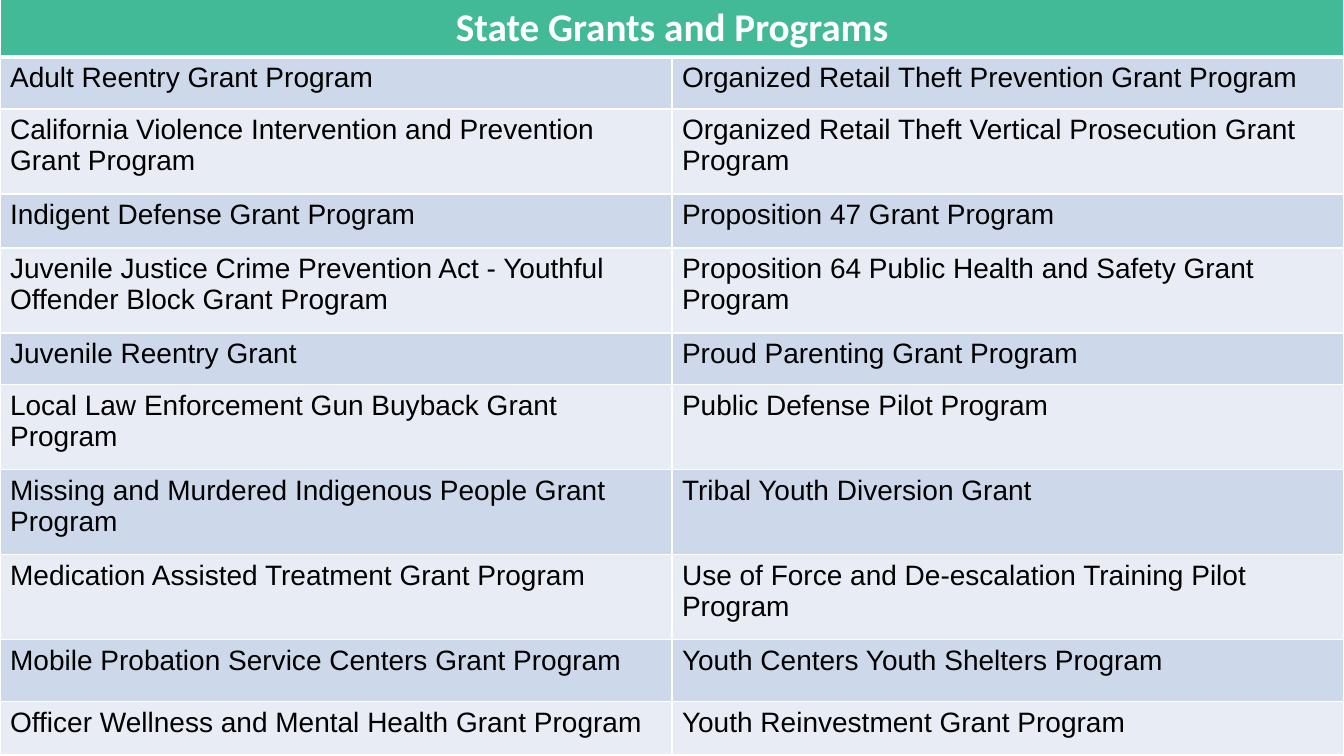
from dataclasses import dataclass

from lxml import etree
from pptx import Presentation
from pptx.dml.color import RGBColor
from pptx.enum.text import PP_ALIGN
from pptx.oxml.ns import qn
from pptx.util import Pt

CENTER, LEFT = PP_ALIGN.CENTER, PP_ALIGN.LEFT
SCALE = 914400 / 100.8  # EMU in one px


@dataclass(frozen=True)
class Theme:
    head: str = "42BA97"
    bands: tuple = ("CDD9EA", "E8EDF5")
    white: str = "FFFFFF"
    black: str = "000000"
    head_font: str = "Calibri"
    body_font: str = "Arial"
    head_size: int = 28
    body_size: int = 20
    thin: int = 1
    thick: int = 3


THEME = Theme()
TITLE = "State Grants and Programs"
GRANTS = [
    # left text, right text, row height
    ("Adult Reentry Grant Program",
     "Organized Retail Theft Prevention Grant Program", 52),
    ("California Violence Intervention and Prevention Grant Program",
     "Organized Retail Theft Vertical Prosecution Grant Program", 85),
    ("Indigent Defense Grant Program",
     "Proposition 47 Grant Program", 54),
    ("Juvenile Justice Crime Prevention Act - Youthful Offender Block Grant Program",
     "Proposition 64 Public Health and Safety Grant Program", 85),
    ("Juvenile Reentry Grant",
     "Proud Parenting Grant Program", 52),
    ("Local Law Enforcement Gun Buyback Grant Program",
     "Public Defense Pilot Program", 85),
    ("Missing and Murdered Indigenous People Grant Program",
     "Tribal Youth Diversion Grant", 85),
    ("Medication Assisted Treatment Grant Program",
     "Use of Force and De-escalation Training Pilot Program", 85),
    ("Mobile Probation Service Centers Grant Program",
     "Youth Centers Youth Shelters Program", 62),
    ("Officer Wellness and Mental Health Grant Program",
     "Youth Reinvestment Grant Program", 53),
]
HEAD_H = 57


def px(n):
    return round(n * SCALE)


def rgb(code):
    return RGBColor.from_string(code)


def style(cell, fill, top, base):
    """Set the borders, then the fill, of one cell."""
    props = cell._tc.get_or_add_tcPr()
    for side, width in zip("LRTB", (THEME.thin, THEME.thin, top, base)):
        line = etree.SubElement(props, qn(f"a:ln{side}"), w=str(Pt(width)))
        paint = etree.SubElement(line, qn("a:solidFill"))
        etree.SubElement(paint, qn("a:srgbClr"), val=THEME.white)
    cell.fill.solid()
    cell.fill.fore_color.rgb = rgb(fill)


def write(cell, text, font, size, color, bold, align):
    para = cell.text_frame.paragraphs[0]
    para.alignment = align
    run = para.add_run()
    run.text = text
    run.font.name = font
    run.font.size = Pt(size)
    run.font.bold = bold
    run.font.color.rgb = rgb(color)


def grid(slide, left, top, width):
    """Place the table of grants under its merged header."""
    heights = [HEAD_H] + [height for _, _, height in GRANTS]
    frame = slide.shapes.add_table(len(heights), 2, px(left), px(top),
                                   px(width), px(sum(heights)))
    table = frame.table
    for col in table.columns:
        col.width = px(width / 2)
    for row, height in zip(table.rows, heights):
        row.height = px(height)

    # Header
    for cell in table.rows[0].cells:
        style(cell, THEME.head, THEME.thin, THEME.thick)
    head = table.cell(0, 0)
    head.merge(table.cell(0, 1))
    write(head, TITLE, THEME.head_font, THEME.head_size, THEME.white, True, CENTER)

    # Banded rows
    for i, (*names, _) in enumerate(GRANTS):
        edge = THEME.thin if i else THEME.thick
        for j, name in enumerate(names):
            cell = table.cell(i + 1, j)
            style(cell, THEME.bands[i % 2], edge, THEME.thin)
            write(cell, name, THEME.body_font, THEME.body_size, THEME.black,
                  False, LEFT)


def main():
    deck = Presentation()
    deck.slide_width, deck.slide_height = px(1344), px(756)
    slide = deck.slides.add_slide(deck.slide_layouts.get_by_name("Blank"))
    grid(slide, 0, -1, 1344)
    deck.save("out.pptx")


if __name__ == "__main__":
    main()
